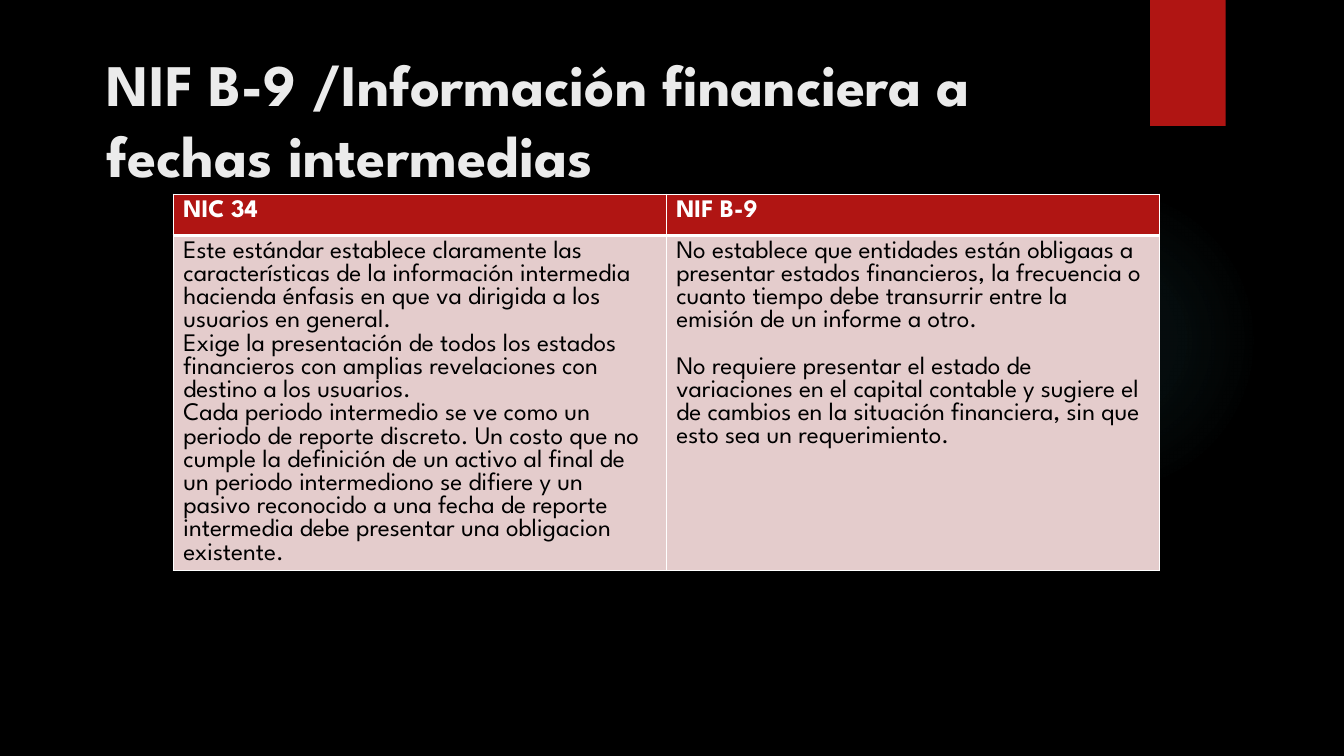
from lxml import etree
from pptx import Presentation
from pptx.dml.color import RGBColor
from pptx.enum.shapes import MSO_SHAPE
from pptx.enum.text import MSO_ANCHOR, MSO_AUTO_SIZE, PP_ALIGN
from pptx.oxml import parse_xml
from pptx.util import Pt

RECTANGLE, OVAL = MSO_SHAPE.RECTANGLE, MSO_SHAPE.OVAL
BOTTOM, LEFT, NO_AUTOFIT = MSO_ANCHOR.BOTTOM, PP_ALIGN.LEFT, MSO_AUTO_SIZE.NONE

BLACK = RGBColor(0x00, 0x00, 0x00)
WHITE = RGBColor(0xFF, 0xFF, 0xFF)
RED = RGBColor(0xB0, 0x15, 0x13)
PINK = RGBColor(0xE4, 0xCC, 0xCC)
TITLE_GRAY = RGBColor(0xEB, 0xEB, 0xEB)
GLOW = RGBColor(0x50, 0xB9, 0xC1)
FONT = "League Spartan"
NAMESPACE = "http://schemas.openxmlformats.org/drawingml/2006/main"
BODY_LINE = Pt(16.56)

HEADERS = ["NIC 34", "NIF B-9"]
BODIES = [
    [
        "Este estándar establece claramente las características de la información intermedia "
        "hacienda énfasis en que va dirigida a los usuarios en general.",
        "Exige la presentación de todos los estados financieros con amplias revelaciones con "
        "destino a los usuarios.",
        "Cada periodo intermedio se ve como un periodo de reporte discreto. Un costo que no "
        "cumple la definición de un activo al final de un periodo intermediono se difiere y un "
        "pasivo reconocido a una fecha de reporte intermedia debe presentar una obligacion "
        "existente.",
    ],
    [
        "No establece que entidades están obligaas a presentar estados financieros, la "
        "frecuencia o cuanto tiempo debe transurrir entre la emisión de un informe a otro.",
        "No requiere presentar el estado de variaciones en el capital contable y sugiere el de "
        "cambios en la situación financiera, sin que esto sea un requerimiento.",
    ],
]


def style_font(font, size, color, bold):
    font.name = FONT
    font.size = Pt(size)
    font.color.rgb = color
    font.bold = bold


def fill_cell(cell, texts, fill, color, bold, gap, bottom_width):
    """Write the paragraphs of a cell, then its white borders and its fill."""
    cell.text_frame.text = "\n".join(texts)
    for index, paragraph in enumerate(cell.text_frame.paragraphs):
        if index and gap:
            paragraph.space_before = gap
        for run in paragraph.runs:
            style_font(run.font, 18, color, bold)
    properties = cell._tc.get_or_add_tcPr()
    for side, width in (("L", 1), ("R", 1), ("T", 1), ("B", bottom_width)):
        properties.append(parse_xml(
            f'<a:ln{side} xmlns:a="{NAMESPACE}" w="{Pt(width)}">'
            f'<a:solidFill><a:srgbClr val="{WHITE}"/></a:solidFill></a:ln{side}>'))
    cell.fill.solid()
    cell.fill.fore_color.rgb = fill


presentation = Presentation()
presentation.slide_width = Pt(960)
presentation.slide_height = Pt(540)
slide = presentation.slides.add_slide(presentation.slide_layouts[5])
slide.background.fill.solid()
slide.background.fill.fore_color.rgb = BLACK

# Background glow
glow = slide.shapes.add_shape(OVAL, Pt(677.5), Pt(131.8), Pt(221.8), Pt(221.8))
glow.shadow.inherit = False
glow.line.fill.background()
stops = "".join(
    f'<a:gs pos="{position * 1000}"><a:srgbClr val="{GLOW}">'
    f'<a:alpha val="{alpha * 1000}"/></a:srgbClr></a:gs>'
    for position, alpha in ((0, 7), (36, 6), (69, 0)))
glow_fill = parse_xml(
    f'<a:gradFill xmlns:a="{NAMESPACE}"><a:gsLst>{stops}</a:gsLst><a:path path="circle">'
    '<a:fillToRect l="50000" t="50000" r="50000" b="50000"/></a:path></a:gradFill>')
glow._element.spPr.find(f"{{{NAMESPACE}}}prstGeom").addnext(glow_fill)

# Red tab at the top
tab = slide.shapes.add_shape(RECTANGLE, Pt(821.5), 0, Pt(54), Pt(90))
tab.fill.solid()
tab.fill.fore_color.rgb = RED
tab.line.fill.background()
tab.shadow.inherit = False
effects = tab._element.spPr.find(f"{{{NAMESPACE}}}effectLst")
shadow = etree.SubElement(effects, f"{{{NAMESPACE}}}outerShdw",
                          blurRad=str(Pt(3)), dist=str(Pt(2)), dir="5400000")
shadow_color = etree.SubElement(shadow, f"{{{NAMESPACE}}}srgbClr", val=str(BLACK))
etree.SubElement(shadow_color, f"{{{NAMESPACE}}}alpha", val="45000")

# Comparison table
table = slide.shapes.add_table(2, 2, Pt(123.8), Pt(138.8), Pt(704.2), Pt(268.5)).table
table.rows[0].height = Pt(29.5)
table.rows[1].height = Pt(239)
for column, (header, texts) in enumerate(zip(HEADERS, BODIES)):
    gap = BODY_LINE if column == 1 else None
    fill_cell(table.cell(0, column), [header], RED, WHITE, True, None, 3)
    fill_cell(table.cell(1, column), texts, PINK, BLACK, False, gap, 1)

# Title
title = slide.shapes.title
title.left, title.top, title.width, title.height = Pt(69.1), Pt(28.8), Pt(740.9), Pt(110.2)
title_frame = title.text_frame
title_frame.text = "NIF B-9 /Información financiera a fechas intermedias"
title_frame.word_wrap = True
title_frame.auto_size = NO_AUTOFIT
title_frame.vertical_anchor = BOTTOM
title_paragraph = title_frame.paragraphs[0]
title_paragraph.alignment = LEFT
title_paragraph.line_spacing = Pt(51)
style_font(title_paragraph.runs[0].font, 42, TITLE_GRAY, True)

presentation.save("out.pptx")
